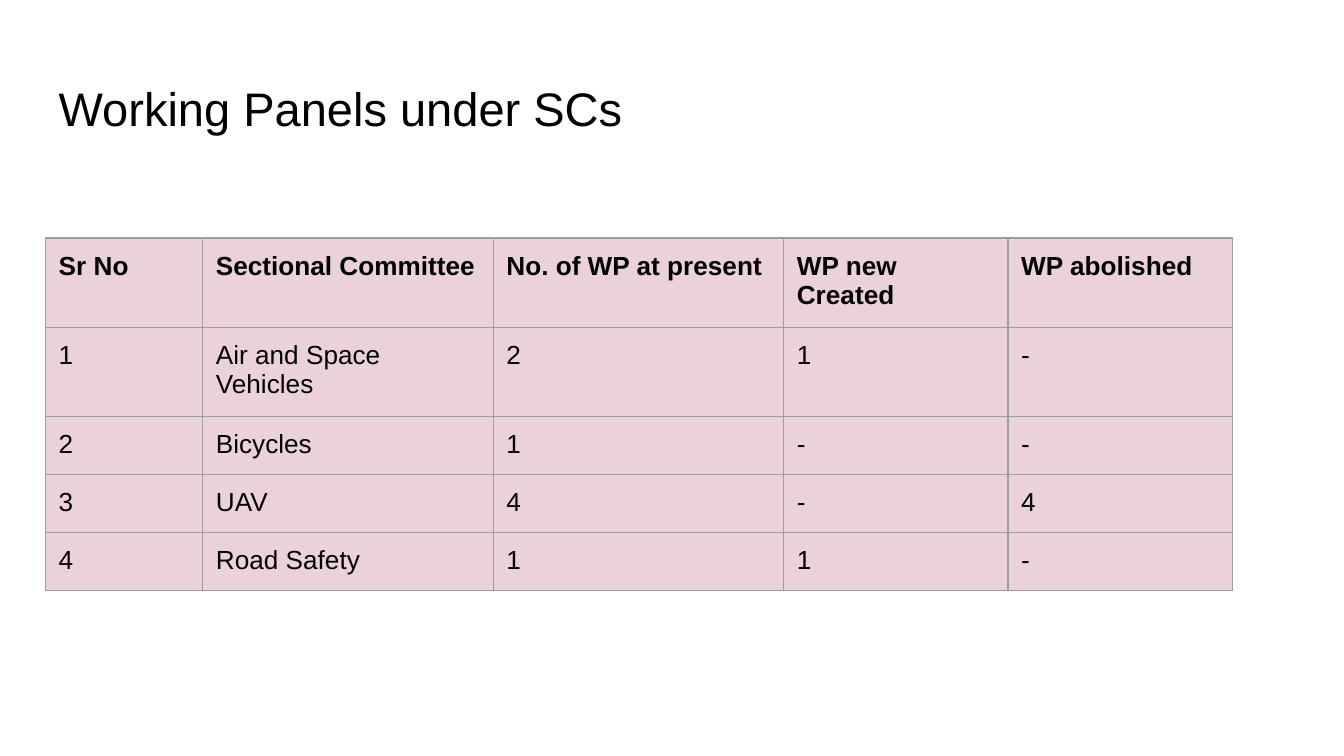
from lxml import etree
from pptx import Presentation
from pptx.dml.color import RGBColor
from pptx.enum.text import MSO_ANCHOR
from pptx.oxml.ns import qn
from pptx.util import Cm, Pt

MIDDLE = MSO_ANCHOR.MIDDLE
TOP = MSO_ANCHOR.TOP

BLACK = RGBColor(0x00, 0x00, 0x00)
PINK = RGBColor(0xEA, 0xD1, 0xDC)
GREY = RGBColor(0x9E, 0x9E, 0x9E)

FONT = "Arial"
LEFT = Cm(0.86)
INSET = Cm(0.25)
COLUMN_WIDTHS = [Cm(2.97), Cm(5.49), Cm(5.49), Cm(4.24), Cm(4.24)]
ROW_HEIGHT = Cm(1.07)

PANELS = [
    ["Sr No", "Sectional Committee", "No. of WP at present", "WP new Created", "WP abolished"],
    ["1", "Air and Space Vehicles", "2", "1", "-"],
    ["2", "Bicycles", "1", "-", "-"],
    ["3", "UAV", "4", "-", "4"],
    ["4", "Road Safety", "1", "1", "-"],
]


def add_text(para, text, size, bold=False):
    span = para.add_run()
    span.text = text
    span.font.name = FONT
    span.font.size = Pt(size)
    span.font.bold = bold
    span.font.color.rgb = BLACK


def set_insets(holder):
    """Give a cell or text frame the same margin on all sides."""
    holder.margin_left = holder.margin_right = INSET
    holder.margin_top = holder.margin_bottom = INSET


def add_title(page, text):
    box = page.shapes.add_textbox(LEFT, Cm(1.24), Cm(23.67), Cm(1.6))
    frame = box.text_frame
    frame.word_wrap = True
    frame.vertical_anchor = MIDDLE
    set_insets(frame)
    add_text(frame.paragraphs[0], text, 25.2)


def add_borders(cell):
    """Line all four sides; must run before the cell's fill is set."""
    properties = cell._tc.get_or_add_tcPr()
    for side in ("a:lnL", "a:lnR", "a:lnT", "a:lnB"):
        line = etree.SubElement(properties, qn(side), w=str(Pt(0.75)))
        fill = etree.SubElement(line, qn("a:solidFill"))
        etree.SubElement(fill, qn("a:srgbClr"), val=str(GREY))


def fill_cell(cell, text, bold):
    add_borders(cell)
    cell.fill.solid()
    cell.fill.fore_color.rgb = PINK
    cell.vertical_anchor = TOP
    set_insets(cell)
    add_text(cell.text_frame.paragraphs[0], text, 14, bold)


def add_panel_table(page, rows):
    frame = page.shapes.add_table(
        len(rows), len(COLUMN_WIDTHS), LEFT, Cm(4.5),
        sum(COLUMN_WIDTHS), ROW_HEIGHT * len(rows))
    table = frame.table
    table.horz_banding = False
    for column, width in zip(table.columns, COLUMN_WIDTHS):
        column.width = width
    for row_index, row in enumerate(rows):
        for column_index, text in enumerate(row):
            fill_cell(table.cell(row_index, column_index), text, row_index == 0)


def main():
    deck = Presentation()
    deck.slide_width = Cm(25.4)
    deck.slide_height = Cm(14.29)
    page = deck.slides.add_slide(deck.slide_layouts[6])
    add_title(page, "Working Panels under SCs")
    add_panel_table(page, PANELS)
    deck.save("out.pptx")


if __name__ == "__main__":
    main()
